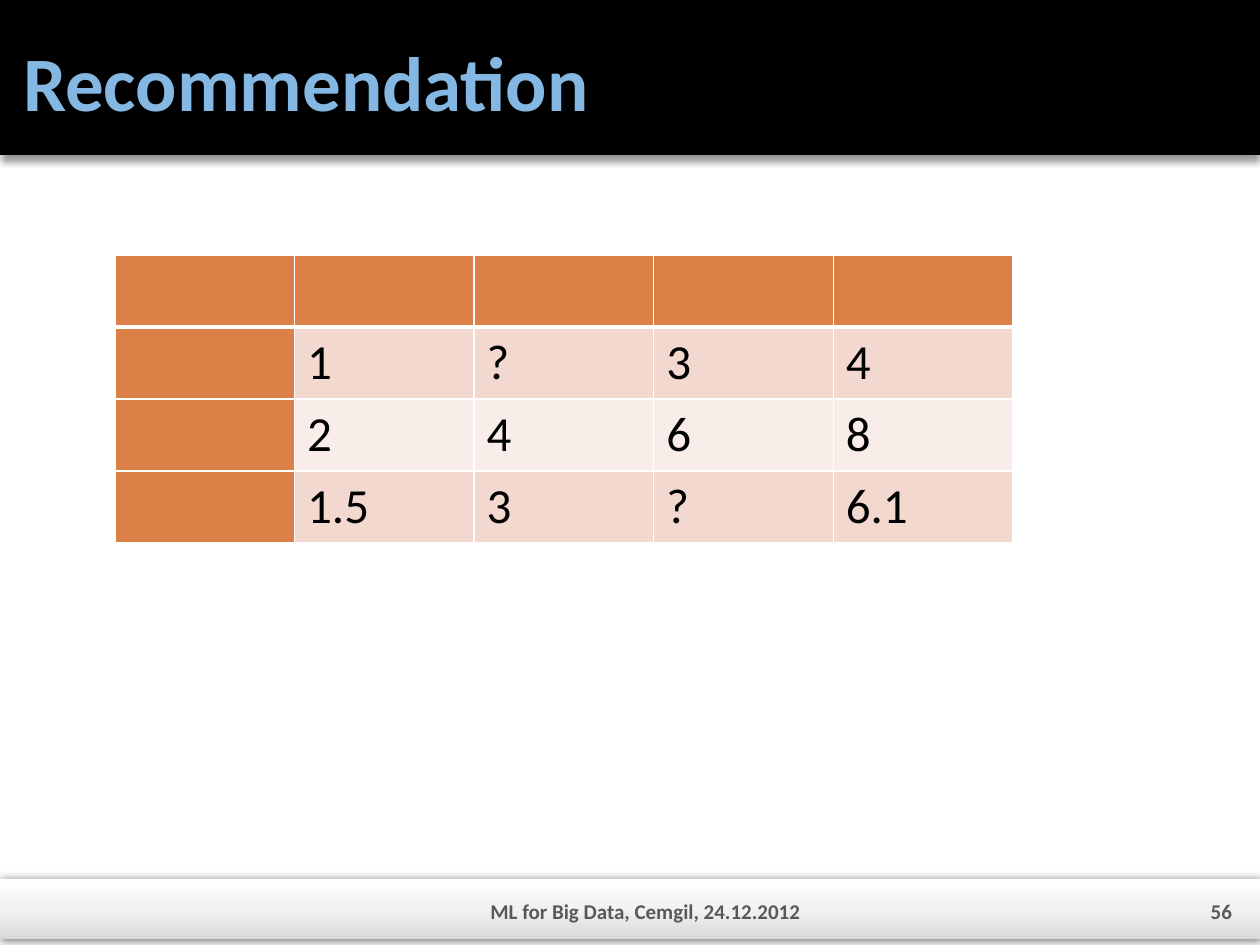
from lxml import etree
from pptx import Presentation
from pptx.dml.color import RGBColor
from pptx.enum.shapes import MSO_SHAPE
from pptx.enum.text import MSO_ANCHOR, PP_ALIGN
from pptx.oxml import parse_xml
from pptx.oxml.ns import qn
from pptx.util import Pt

RECTANGLE = MSO_SHAPE.RECTANGLE
MIDDLE = MSO_ANCHOR.MIDDLE
LEFT, CENTER, RIGHT = PP_ALIGN.LEFT, PP_ALIGN.CENTER, PP_ALIGN.RIGHT
TITLE_ONLY = 5
PX = 914400 // 126
FONT = "Calibri"
NAMESPACE = 'xmlns:a="http://schemas.openxmlformats.org/drawingml/2006/main"'
COLORS = {
    "black": "000000", "title": "84B8E2", "footer": "595959", "white": "FFFFFF",
    "accent": "DD8047", "odd": "F2D8CF", "even": "F9EDE9",
    "gray": "D9D9D9", "light": "F2F2F2",
}
RATINGS = [
    ["", "", "", "", ""],
    ["", "1", "?", "3", "4"],
    ["", "2", "4", "6", "8"],
    ["", "1.5", "3", "?", "6.1"],
]


def color(name):
    return RGBColor.from_string(COLORS[name])


def px(*lengths):
    return [length * PX for length in lengths]


def add_run(paragraph, text, size, color_name, bold=False):
    run = paragraph.add_run()
    run.text = text
    run.font.name = FONT
    run.font.size = Pt(size)
    run.font.bold = bold
    run.font.color.rgb = color(color_name)


def fill_text(shape, text, size, color_name, alignment, margins):
    frame = shape.text_frame
    frame.word_wrap = True
    frame.vertical_anchor = MIDDLE
    (frame.margin_left, frame.margin_top,
     frame.margin_right, frame.margin_bottom) = px(*margins)
    paragraph = frame.paragraphs[0]
    paragraph.alignment = alignment
    add_run(paragraph, text, size, color_name, bold=True)


def add_band(slide, box, opacity, blur, distance):
    band = slide.shapes.add_shape(RECTANGLE, *px(*box))
    band.line.fill.background()
    band.fill.solid()
    band.fill.fore_color.rgb = color("black")
    band.element.spPr.append(parse_xml(
        f'<a:effectLst {NAMESPACE}><a:outerShdw blurRad="{Pt(blur)}" '
        f'dist="{Pt(distance)}" dir="5400000" algn="ctr" rotWithShape="0">'
        f'<a:srgbClr val="{COLORS["black"]}"><a:alpha val="{opacity * 1000}"/>'
        '</a:srgbClr></a:outerShdw></a:effectLst>'))
    return band


def add_header(slide, box):
    left, top, width, height = box
    band = add_band(slide, box, 40, 4, 3)
    title = slide.shapes.title
    title.element.addprevious(band.element)
    title.left, title.top, title.width, title.height = px(
        left + 10, top + 16, width - 25, height - 26)
    fill_text(title, "Recommendation", 44, "title", LEFT, (13, 6, 6, 6))


def add_footer(slide, box):
    left, top, width, height = box
    band = add_band(slide, box, 50, 5, 0)
    stops = "".join(
        f'<a:gs pos="{position * 1000}"><a:srgbClr val="{COLORS[name]}"/></a:gs>'
        for position, name in ((0, "gray"), (50, "light"), (100, "white")))
    properties = band.element.spPr
    properties.replace(properties.find(qn("a:solidFill")), parse_xml(
        f'<a:gradFill {NAMESPACE}><a:gsLst>{stops}</a:gsLst>'
        '<a:lin ang="16200000" scaled="0"/></a:gradFill>'))
    for offset, text_width, text, alignment, side in (
            (154, 983, "ML for Big Data, Cemgil, 24.12.2012", CENTER, 6),
            (1144, 101, "56", RIGHT, 13)):
        label = slide.shapes.add_textbox(
            *px(left + offset, top + 10, text_width, 38))
        fill_text(label, text, 12, "footer", alignment, (side, 6, side, 0))


def add_borders(cell, widths):
    properties = cell._tc.get_or_add_tcPr()
    for side, width in widths.items():
        line = etree.SubElement(properties, qn(f"a:ln{side}"), w=str(Pt(width)))
        fill = etree.SubElement(line, qn("a:solidFill"))
        etree.SubElement(fill, qn("a:srgbClr"), val=COLORS["white"])


def add_ratings(slide, box):
    rows, columns = len(RATINGS), len(RATINGS[0])
    table = slide.shapes.add_table(rows, columns, *px(*box)).table
    table.first_row = False
    table.horz_banding = False
    for row, values in enumerate(RATINGS):
        for column, value in enumerate(values):
            cell = table.cell(row, column)
            add_borders(cell, {"L": 1, "R": 1, "T": 3 if row == 1 else 1,
                               "B": 3 if row == 0 else 1})
            heading = row == 0 or column == 0
            cell.fill.solid()
            cell.fill.fore_color.rgb = color(
                "accent" if heading else "odd" if row % 2 else "even")
            if value:
                add_run(cell.text_frame.paragraphs[0], value, 28, "black")


def main():
    presentation = Presentation()
    presentation.slide_width, presentation.slide_height = px(1260, 945)
    slide = presentation.slides.add_slide(presentation.slide_layouts[TITLE_ONLY])
    add_header(slide, (0, 0, 1260, 155))
    add_footer(slide, (0, 879, 1260, 60))
    add_ratings(slide, (115, 255, 898, 288))
    presentation.save("out.pptx")


if __name__ == "__main__":
    main()
